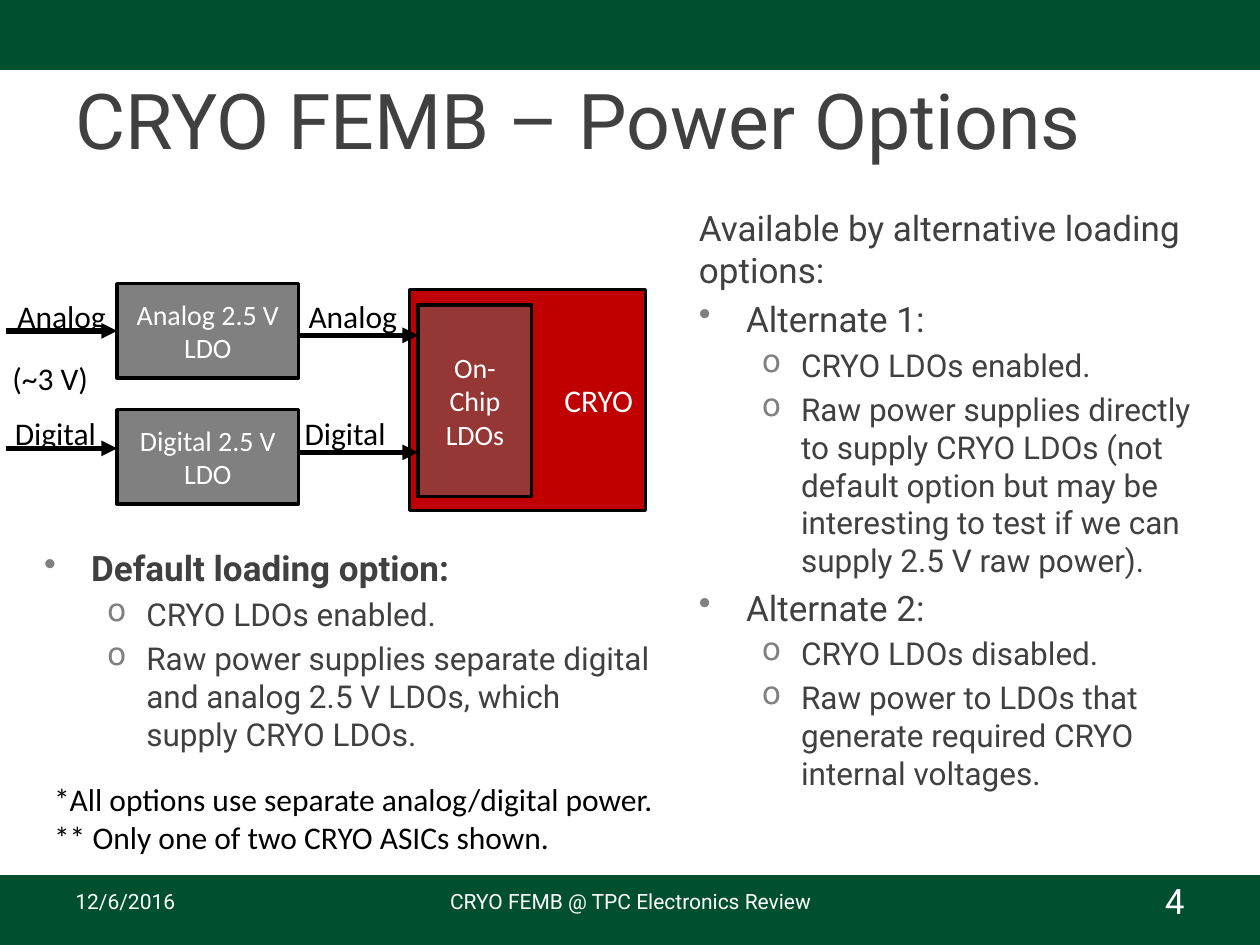
from dataclasses import dataclass
from typing import Optional

from lxml.etree import SubElement
from pptx import Presentation
from pptx.dml.color import RGBColor
from pptx.enum.shapes import MSO_CONNECTOR, MSO_SHAPE
from pptx.enum.text import MSO_ANCHOR, PP_ALIGN
from pptx.oxml.ns import qn
from pptx.util import Cm, Pt

GREEN = RGBColor(0x00, 0x4F, 0x2F)
CHARCOAL = RGBColor(0x40, 0x40, 0x40)
GRAY = RGBColor(0x80, 0x80, 0x80)
RED = RGBColor(0xC0, 0x00, 0x00)
DARK_RED = RGBColor(0x95, 0x37, 0x35)
BLACK = RGBColor(0x00, 0x00, 0x00)
WHITE = RGBColor(0xFF, 0xFF, 0xFF)


@dataclass(frozen=True)
class Box:
    left: float
    top: float
    width: float
    height: float

    def lengths(self) -> tuple:
        return Cm(self.left), Cm(self.top), Cm(self.width), Cm(self.height)


@dataclass(frozen=True)
class TextStyle:
    font: str
    size: int
    color: RGBColor
    align: PP_ALIGN = PP_ALIGN.LEFT
    anchor: MSO_ANCHOR = MSO_ANCHOR.TOP


@dataclass(frozen=True)
class Level:
    size: int
    depth: int = 0
    bullet: str = ""
    margin: float = 0
    hanging: float = 0


@dataclass(frozen=True)
class Item:
    text: str
    level: Level
    bold: bool = False


INTRO = Level(20)
OPTION = Level(20, 0, "•", 0.95, 0.95)
DETAIL = Level(18, 1, "o", 2.06, 0.79)

LABEL = TextStyle("Calibri", 18, BLACK)
BLOCK = TextStyle("Calibri", 16, WHITE, PP_ALIGN.CENTER, MSO_ANCHOR.MIDDLE)
CHIP = TextStyle("Calibri", 18, WHITE, PP_ALIGN.RIGHT, MSO_ANCHOR.MIDDLE)


def write(frame, lines: list[str], style: TextStyle) -> None:
    frame.vertical_anchor = style.anchor
    for index, line in enumerate(lines):
        paragraph = frame.paragraphs[0] if index == 0 else frame.add_paragraph()
        paragraph.text = line
        paragraph.alignment = style.align
        paragraph.font.name = style.font
        paragraph.font.size = Pt(style.size)
        paragraph.font.color.rgb = style.color


def add_text(slide, box: Box, lines: list[str], style: TextStyle, wrap: bool = True) -> None:
    frame = slide.shapes.add_textbox(*box.lengths()).text_frame
    frame.word_wrap = wrap
    write(frame, lines, style)


def add_block(slide, box: Box, fill: RGBColor, outline: RGBColor,
              text: str = "", style: TextStyle = BLOCK):
    block = slide.shapes.add_shape(MSO_SHAPE.RECTANGLE, *box.lengths())
    block.shadow.inherit = False
    block.fill.solid()
    block.fill.fore_color.rgb = fill
    block.line.color.rgb = outline
    block.line.width = Pt(2)
    if text:
        write(block.text_frame, [text], style)
    return block


def add_arrow(slide, start: float, end: float, y: float, target: Optional[object] = None) -> None:
    arrow = slide.shapes.add_connector(MSO_CONNECTOR.STRAIGHT, Cm(start), Cm(y), Cm(end), Cm(y))
    arrow.line.color.rgb = BLACK
    arrow.line.width = Pt(3)
    SubElement(arrow.line._get_or_add_ln(), qn("a:tailEnd"), type="triangle")
    SubElement(arrow._element.spPr, qn("a:effectLst"))
    if target is not None:
        arrow.end_connect(target, 1)


def add_outline(slide, box: Box, items: list[Item]) -> None:
    frame = slide.shapes.add_textbox(*box.lengths()).text_frame
    frame.word_wrap = True
    for index, item in enumerate(items):
        level = item.level
        paragraph = frame.paragraphs[0] if index == 0 else frame.add_paragraph()
        paragraph.text = item.text
        paragraph.level = level.depth
        paragraph.space_before = Pt(0.2 * level.size)
        if level.bullet:
            properties = paragraph._p.get_or_add_pPr()
            properties.set("marL", str(Cm(level.margin)))
            properties.set("indent", str(-Cm(level.hanging)))
            bullet_color = SubElement(properties, qn("a:buClr"))
            SubElement(bullet_color, qn("a:srgbClr"), val=str(GRAY))
            SubElement(properties, qn("a:buChar"), char=level.bullet)
        paragraph.font.name = "Roboto"
        paragraph.font.size = Pt(level.size)
        paragraph.font.bold = item.bold
        paragraph.font.color.rgb = CHARCOAL


def main() -> None:
    presentation = Presentation()
    presentation.slide_width, presentation.slide_height = Cm(25.4), Cm(19.05)
    slide = presentation.slides.add_slide(presentation.slide_layouts[6])

    # Bands and title
    for band_top in (17.68, 0):
        add_block(slide, Box(0, band_top, 25.4, 1.37), GREEN, GREEN)
    add_text(slide, Box(1.27, 1.4, 22.86, 1.98), ["CRYO FEMB – Power Options"],
             TextStyle("Roboto", 44, CHARCOAL, anchor=MSO_ANCHOR.MIDDLE))

    # Alternative loading options
    add_outline(slide, Box(13.84, 4.04, 10.44, 9.5), [
        Item("Available by alternative loading options:", INTRO),
        Item("Alternate 1:", OPTION),
        Item("CRYO LDOs enabled.", DETAIL),
        Item("Raw power supplies directly to supply CRYO LDOs (not default option "
             "but may be interesting to test if we can supply 2.5 V raw power).", DETAIL),
        Item("Alternate 2:", OPTION),
        Item("CRYO LDOs disabled.", DETAIL),
        Item("Raw power to LDOs that generate required CRYO internal voltages.", DETAIL),
    ])

    # Footer
    for left, width, text, size, align in (
        (8.69, 8.05, "CRYO FEMB @ TPC Electronics Review", 12, PP_ALIGN.CENTER),
        (18.21, 5.92, "4", 20, PP_ALIGN.RIGHT),
        (1.27, 5.92, "12/6/2016", 12, PP_ALIGN.LEFT),
    ):
        add_text(slide, Box(left, 17.65, width, 1.02), [text],
                 TextStyle("Roboto", size, WHITE, align, MSO_ANCHOR.MIDDLE))

    # Power diagram: regulators and chip
    analog_ldo, _ = [
        add_block(slide, Box(2.36, top, 3.66, 1.9), GRAY, BLACK, f"{supply} 2.5 V LDO")
        for supply, top in (("Analog", 5.72), ("Digital", 8.26))
    ]
    add_block(slide, Box(8.26, 5.84, 4.75, 4.45), RED, BLACK, "CRYO", CHIP)
    add_block(slide, Box(8.43, 6.15, 2.29, 3.86), DARK_RED, BLACK, "On-Chip LDOs")

    # Power diagram: supply arrows and their labels
    for supply, label_top, label_width, raw_left, regulated_left, raw_y, regulated_y, target in (
        ("Analog", 5.87, 2.31, 0.1, 5.97, 6.67, 6.76, analog_ldo),
        ("Digital", 8.23, 2.16, 0.05, 5.89, 9.04, 9.12, None),
    ):
        add_arrow(slide, 0.13, 2.36, raw_y, target)
        add_arrow(slide, 6.02, 8.43, regulated_y)
        for left in (raw_left, regulated_left):
            add_text(slide, Box(left, label_top, label_width, 1.02), [supply], LABEL, wrap=False)
    add_text(slide, Box(0, 7.11, 3.86, 1.02), ["(~3 V)"], LABEL)

    # Default option and footnotes
    add_outline(slide, Box(0.64, 10.9, 12.8, 3.89), [
        Item("Default loading option:", OPTION, bold=True),
        Item("CRYO LDOs enabled.", DETAIL),
        Item("Raw power supplies separate digital and analog 2.5 V LDOs, "
             "which supply CRYO LDOs.", DETAIL),
    ])
    add_text(slide, Box(0.84, 15.6, 12.73, 1.8), [
        "*All options use separate analog/digital power.",
        "** Only one of two CRYO ASICs shown.",
    ], LABEL, wrap=False)

    presentation.save("out.pptx")


if __name__ == "__main__":
    main()
